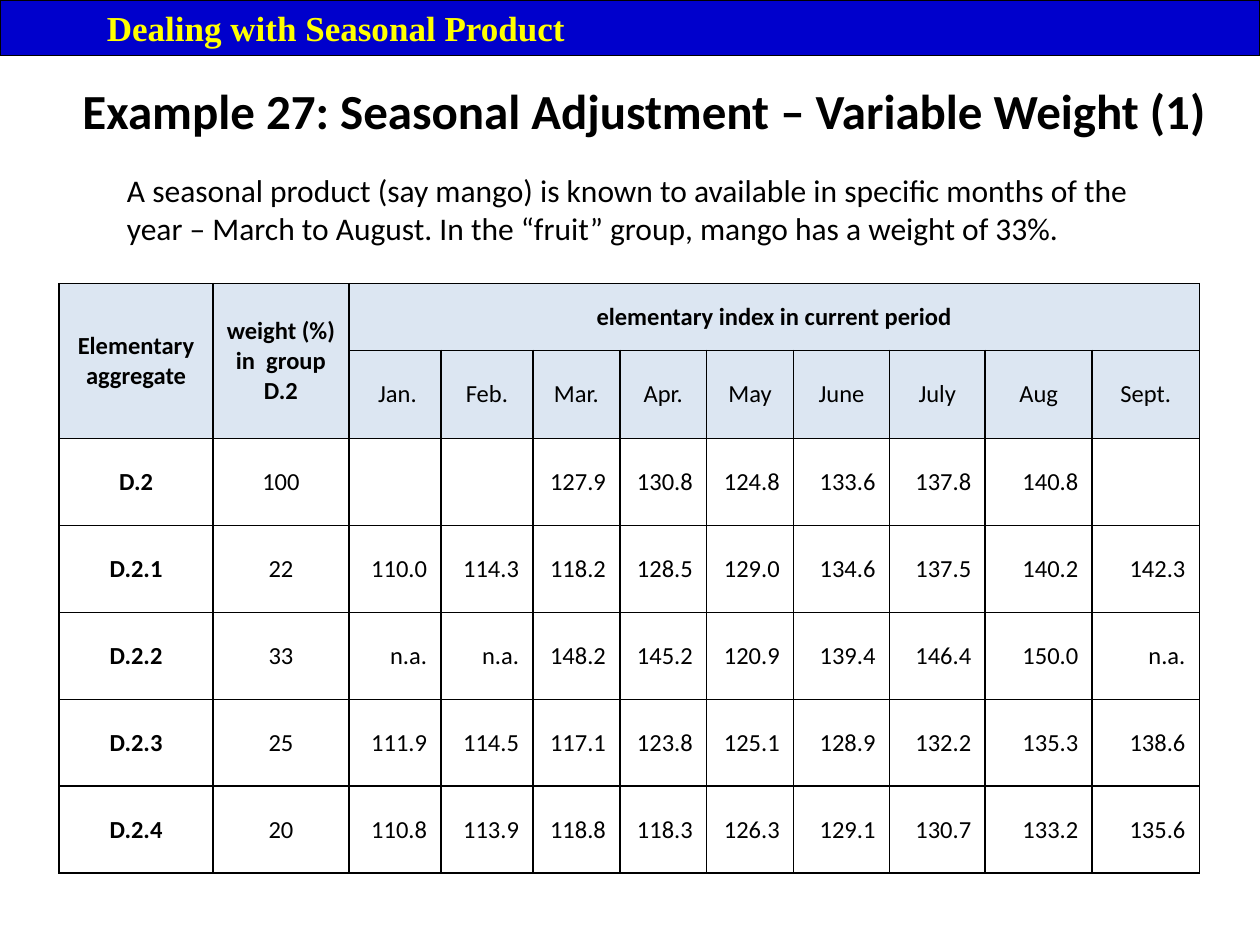
"""Build a slide with a table of seasonally adjusted elementary indices."""
from lxml import etree
from pptx import Presentation, util as u
from pptx.dml.color import RGBColor
from pptx.enum import shapes, text
from pptx.oxml.ns import qn

Inches = u.Inches
LEFT, CENTER, RIGHT = text.PP_ALIGN.LEFT, text.PP_ALIGN.CENTER, text.PP_ALIGN.RIGHT


def color(value):
    """Turn a hex string into a colour."""
    return RGBColor.from_string(value)


def write(frame, words, align=LEFT, ink="000000", indent=0, **font):
    """Write one formatted paragraph into a text frame."""
    paragraph = frame.paragraphs[0]
    paragraph.alignment = align
    if indent:
        paragraph._p.get_or_add_pPr().set("indent", str(Inches(indent)))
    run = paragraph.add_run()
    run.text = words
    run.font.color.rgb = color(ink)
    for key, value in ({"name": "Calibri", "bold": False} | font).items():
        setattr(run.font, key, value)


deck = Presentation()
deck.slide_width, deck.slide_height = Inches(10), Inches(7.5)
slide = deck.slides.add_slide(deck.slide_layouts[5])

title = slide.shapes.title
title_place = {"left": 0.5, "top": 0.52, "width": 9.22, "height": 0.71}
for key, value in title_place.items():
    setattr(title, key, Inches(value))
title.text_frame.vertical_anchor = text.MSO_ANCHOR.MIDDLE
write(title.text_frame, "Example 27: Seasonal Adjustment – Variable Weight (1)",
      CENTER, size=u.Pt(28), bold=True)

banner = slide.shapes.add_shape(shapes.MSO_SHAPE.RECTANGLE, 0, 0, Inches(10), Inches(0.44))
banner.shadow.inherit = False
banner.fill.solid()
banner.fill.fore_color.rgb = color("0000CC")
banner.line.color.rgb = color("000000")
banner.line.width = u.Pt(0.75)
write(banner.text_frame, "Dealing with Seasonal Product", ink="FFFF00", indent=0.75,
      name="Times New Roman", size=u.Pt(20), bold=True)

intro = slide.shapes.add_textbox(Inches(0.91), Inches(1.31), Inches(8.27), Inches(0.71))
intro.text_frame.word_wrap = True
write(intro.text_frame,
      "A seasonal product (say mango) is known to available in specific months of the year"
      " – March to August. In the “fruit” group, mango has a weight of 33%.", size=u.Pt(18))

column_widths = [1.22, 1.08, 0.73, 0.73, 0.69, 0.69, 0.69, 0.76, 0.76, 0.85, 0.85]
row_heights = [0.53] + [0.69] * 6
index_rows = [
    ["Elementary aggregate", "weight (%) in  group D.2", "elementary index in current period"]
    + [""] * 8,
    ["", "", "Jan.", "Feb.", "Mar.", "Apr.", "May", "June", "July", "Aug", "Sept."],
    ["D.2", "100", "", "", "127.9", "130.8", "124.8", "133.6", "137.8", "140.8", ""],
    ["D.2.1", "22", "110.0", "114.3", "118.2", "128.5", "129.0", "134.6", "137.5", "140.2", "142.3"],
    ["D.2.2", "33", "n.a.", "n.a.", "148.2", "145.2", "120.9", "139.4", "146.4", "150.0", "n.a."],
    ["D.2.3", "25", "111.9", "114.5", "117.1", "123.8", "125.1", "128.9", "132.2", "135.3", "138.6"],
    ["D.2.4", "20", "110.8", "113.9", "118.8", "118.3", "126.3", "129.1", "130.7", "133.2", "135.6"],
]
indices = slide.shapes.add_table(
    len(row_heights), len(column_widths), Inches(0.47), Inches(2.25),
    Inches(sum(column_widths)), Inches(sum(row_heights))).table
for column, width in zip(indices.columns, column_widths):
    column.width = Inches(width)
for row, height in zip(indices.rows, row_heights):
    row.height = Inches(height)

cell_format = {
    "margin_left": Inches(0.11), "margin_right": Inches(0.11),
    "margin_top": 0, "margin_bottom": 0, "vertical_anchor": text.MSO_ANCHOR.MIDDLE,
}
for r, entries in enumerate(index_rows):
    for c, entry in enumerate(entries):
        cell = indices.cell(r, c)
        for key, value in cell_format.items():
            setattr(cell, key, value)
        for side in ("lnL", "lnR", "lnT", "lnB"):
            border = etree.SubElement(cell._tc.get_or_add_tcPr(), qn(f"a:{side}"), w=str(u.Pt(1)))
            ink = etree.SubElement(border, qn("a:solidFill"))
            etree.SubElement(ink, qn("a:srgbClr"), val="000000")
        if r < 2:
            cell.fill.solid()
            cell.fill.fore_color.rgb = color("DCE6F2")
        else:
            cell.fill.background()
        if entry:
            write(cell.text_frame, entry, CENTER if r < 2 or c < 2 else RIGHT,
                  indent=0.04 if entry == "Jan." else 0,
                  size=u.Pt(14), bold=r == 0 or c == 0)

for first, last in [((0, 0), (1, 0)), ((0, 1), (1, 1)), ((0, 2), (0, 10))]:
    indices.cell(*first).merge(indices.cell(*last))

deck.save("out.pptx")
